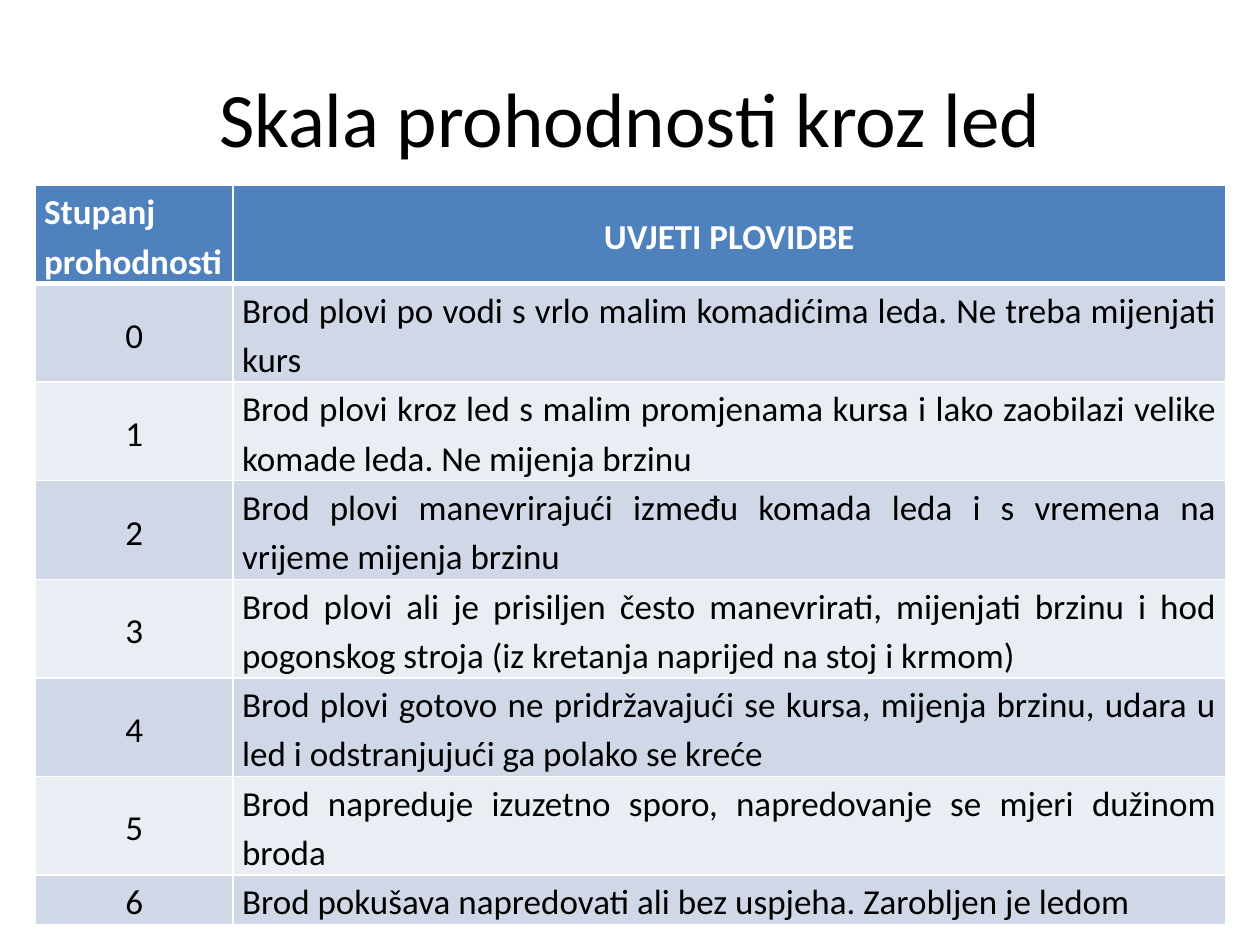
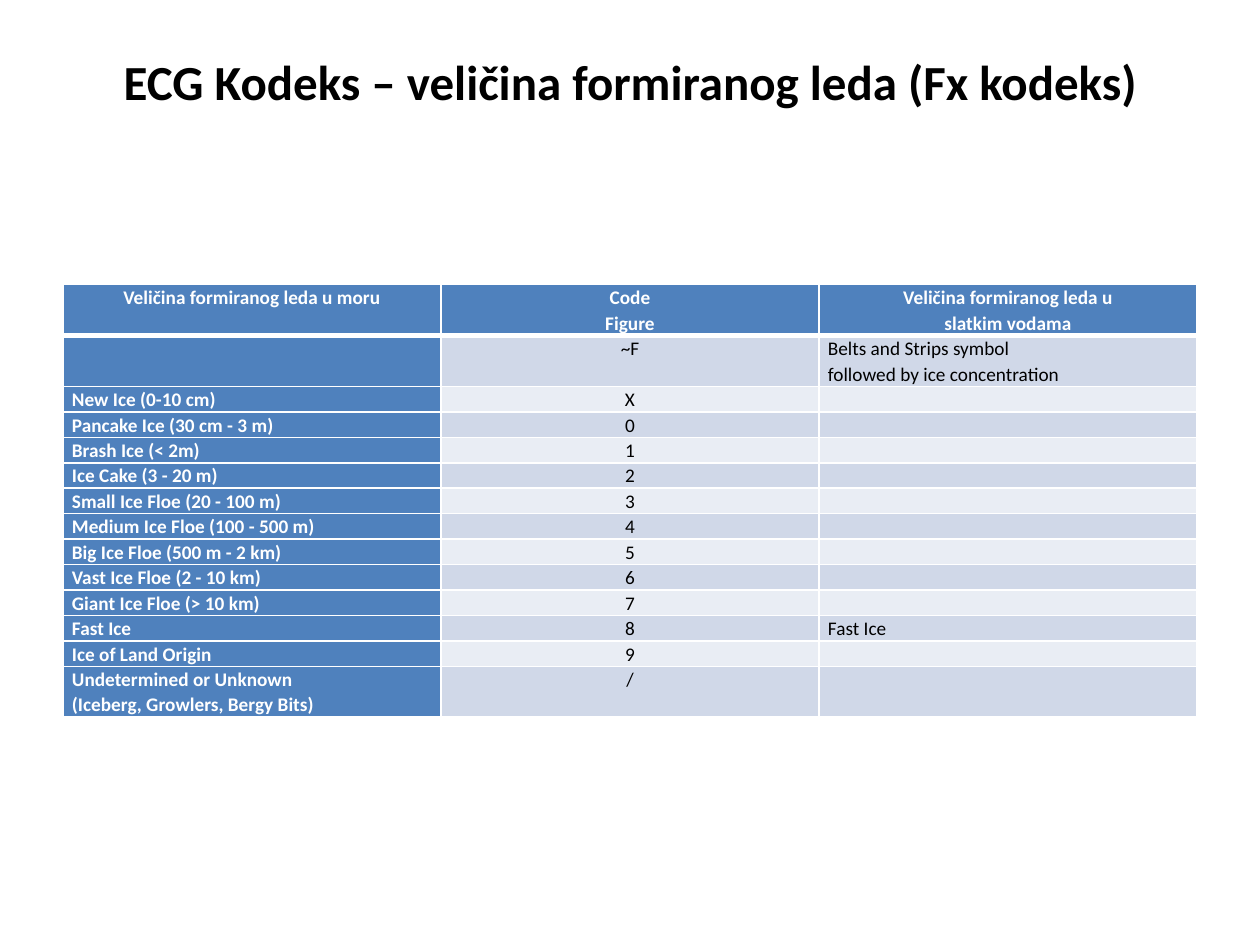
from dataclasses import dataclass

from lxml import etree
from pptx import Presentation
from pptx.dml.color import RGBColor
from pptx.enum import text
from pptx.oxml import ns
from pptx.util import Cm, Pt

ALIGN, ANCHOR = text.PP_ALIGN, text.MSO_ANCHOR


@dataclass(frozen=True)
class Theme:
    font: str = "Calibri"
    ink: str = "000000"
    paper: str = "FFFFFF"
    header: str = "4F81BD"
    bands: tuple = ("D0D8E8", "E9EDF4")
    thin: float = 1
    thick: float = 3
    title_left: float = 1.27
    title_top: float = 0.76
    title_width: float = 22.86
    cell_inset: float = 0.18


THEME = Theme()

PASSABILITY = {
    "title": "Skala prohodnosti kroz led",
    "title_size": 44, "title_bold": False, "title_height": 3.18,
    "left": 0.71, "top": 3.73, "widths": (3.99, 20.0),
    "size": 20, "spacing": 1.15, "line_height": 0.99,
    "row_lines": [2] * 7 + [1],
    "header_column": False,
    "header_aligns": (ALIGN.JUSTIFY, ALIGN.CENTER),
    "header_anchors": (ANCHOR.TOP, ANCHOR.MIDDLE),
    "aligns": (ALIGN.CENTER, ALIGN.JUSTIFY),
    "anchors": (ANCHOR.MIDDLE, ANCHOR.TOP),
    "rows": [
        ("Stupanj prohodnosti", "UVJETI PLOVIDBE"),
        ("0", "Brod plovi po vodi s vrlo malim komadićima leda. Ne treba mijenjati kurs"),
        ("1", "Brod plovi kroz led s malim promjenama kursa i lako zaobilazi velike "
              "komade leda. Ne mijenja brzinu"),
        ("2", "Brod plovi manevrirajući između komada leda i s vremena na vrijeme "
              "mijenja brzinu"),
        ("3", "Brod plovi ali je prisiljen često manevrirati, mijenjati brzinu i hod "
              "pogonskog stroja (iz kretanja naprijed na stoj i krmom)"),
        ("4", "Brod plovi gotovo ne pridržavajući se kursa, mijenja brzinu, udara u led "
              "i odstranjujući ga polako se kreće"),
        ("5", "Brod napreduje izuzetno sporo, napredovanje se mjeri dužinom broda"),
        ("6", "Brod pokušava napredovati ali bez uspjeha. Zarobljen je ledom"),
    ],
}

FLOE_SIZE = {
    "title": "ECG Kodeks – veličina formiranog leda (Fx kodeks)",
    "title_size": 28, "title_bold": True, "title_height": 1.75,
    "left": 1.27, "top": 5.74, "widths": (7.62,) * 3,
    "size": 11, "spacing": 1.07, "line_height": 0.51,
    "row_lines": [2, 2] + [1] * 11 + [2],
    "header_column": True,
    "header_aligns": (ALIGN.CENTER,) * 3,
    "header_anchors": (ANCHOR.TOP,) * 3,
    "aligns": (ALIGN.LEFT, ALIGN.CENTER, ALIGN.LEFT),
    "anchors": (ANCHOR.TOP,) * 3,
    "rows": [
        ("Veličina formiranog leda u moru", "Code\nFigure",
         "Veličina formiranog leda u\nslatkim vodama"),
        ("", "~F", "Belts and Strips symbol\nfollowed by ice concentration"),
        ("New Ice (0-10 cm)", "X", ""),
        ("Pancake Ice (30 cm - 3 m)", "0", ""),
        ("Brash Ice (< 2m)", "1", ""),
        ("Ice Cake (3 - 20 m)", "2", ""),
        ("Small Ice Floe (20 - 100 m)", "3", ""),
        ("Medium Ice Floe (100 - 500 m)", "4", ""),
        ("Big Ice Floe (500 m - 2 km)", "5", ""),
        ("Vast Ice Floe (2 - 10 km)", "6", ""),
        ("Giant Ice Floe (> 10 km)", "7", ""),
        ("Fast Ice", "8", "Fast Ice"),
        ("Ice of Land Origin", "9", ""),
        ("Undetermined or Unknown\n(Iceberg, Growlers, Bergy Bits)", "/", ""),
    ],
}


def style_text(frame, size, color, bold, align, spacing=None):
    for para in frame.paragraphs:
        para.alignment = align
        para.line_spacing = spacing
        for span in para.runs:
            span.font.name = THEME.font
            span.font.size = Pt(size)
            span.font.bold = bold
            span.font.color.rgb = RGBColor.from_string(color)
        if not para.runs:
            # An empty line keeps the row low only with its own type size.
            etree.SubElement(para._p, ns.qn("a:endParaRPr"), sz=str(size * 100))


def set_borders(cell, widths):
    """Draw the cell borders; widths maps L, R, T, B to points."""
    properties = cell._tc.get_or_add_tcPr()
    for index, side in enumerate("LRTB"):
        line = etree.Element(ns.qn(f"a:ln{side}"), w=str(Pt(widths[side])))
        fill = etree.SubElement(line, ns.qn("a:solidFill"))
        etree.SubElement(fill, ns.qn("a:srgbClr"), val=THEME.paper)
        properties.insert(index, line)


def add_title(page, content):
    title = page.shapes.title
    title.left, title.top = Cm(THEME.title_left), Cm(THEME.title_top)
    title.width, title.height = Cm(THEME.title_width), Cm(content["title_height"])
    frame = title.text_frame
    frame.text = content["title"]
    frame.vertical_anchor = ANCHOR.MIDDLE
    frame.auto_size = text.MSO_AUTO_SIZE.NONE
    style_text(frame, content["title_size"], THEME.ink, content["title_bold"], ALIGN.CENTER)


def format_cell(cell, value, row, column, content):
    is_top = row == 0
    is_header = is_top or (content["header_column"] and column == 0)
    prefix = "header_" if is_top else ""
    cell.text_frame.text = value
    cell.vertical_anchor = content[prefix + "anchors"][column]
    cell.margin_left = cell.margin_right = Cm(THEME.cell_inset)
    cell.margin_top = cell.margin_bottom = 0
    cell.fill.solid()
    cell.fill.fore_color.rgb = RGBColor.from_string(
        THEME.header if is_header else THEME.bands[(row - 1) % 2])
    set_borders(cell, {"L": THEME.thin, "R": THEME.thin,
                       "T": THEME.thick if row == 1 else THEME.thin,
                       "B": THEME.thick if is_top else THEME.thin})
    style_text(cell.text_frame, content["size"],
               THEME.paper if is_header else THEME.ink, is_header,
               content[prefix + "aligns"][column], content["spacing"])


def add_ice_table(page, content):
    rows, widths = content["rows"], content["widths"]
    heights = [lines * content["line_height"] for lines in content["row_lines"]]
    table = page.shapes.add_table(
        len(rows), len(widths), Cm(content["left"]), Cm(content["top"]),
        Cm(sum(widths)), Cm(sum(heights))).table
    table.first_col = content["header_column"]
    for column, width in zip(table.columns, widths):
        column.width = Cm(width)
    for row, (values, height) in enumerate(zip(rows, heights)):
        table.rows[row].height = Cm(height)
        for column, value in enumerate(values):
            format_cell(table.cell(row, column), value, row, column, content)


def main():
    deck = Presentation()
    deck.slide_width, deck.slide_height = Cm(25.4), Cm(19.05)
    title_only = deck.slide_layouts.get_by_name("Title Only")
    for content in (PASSABILITY, FLOE_SIZE):
        page = deck.slides.add_slide(title_only)
        add_title(page, content)
        add_ice_table(page, content)
    deck.save("out.pptx")


if __name__ == "__main__":
    main()
